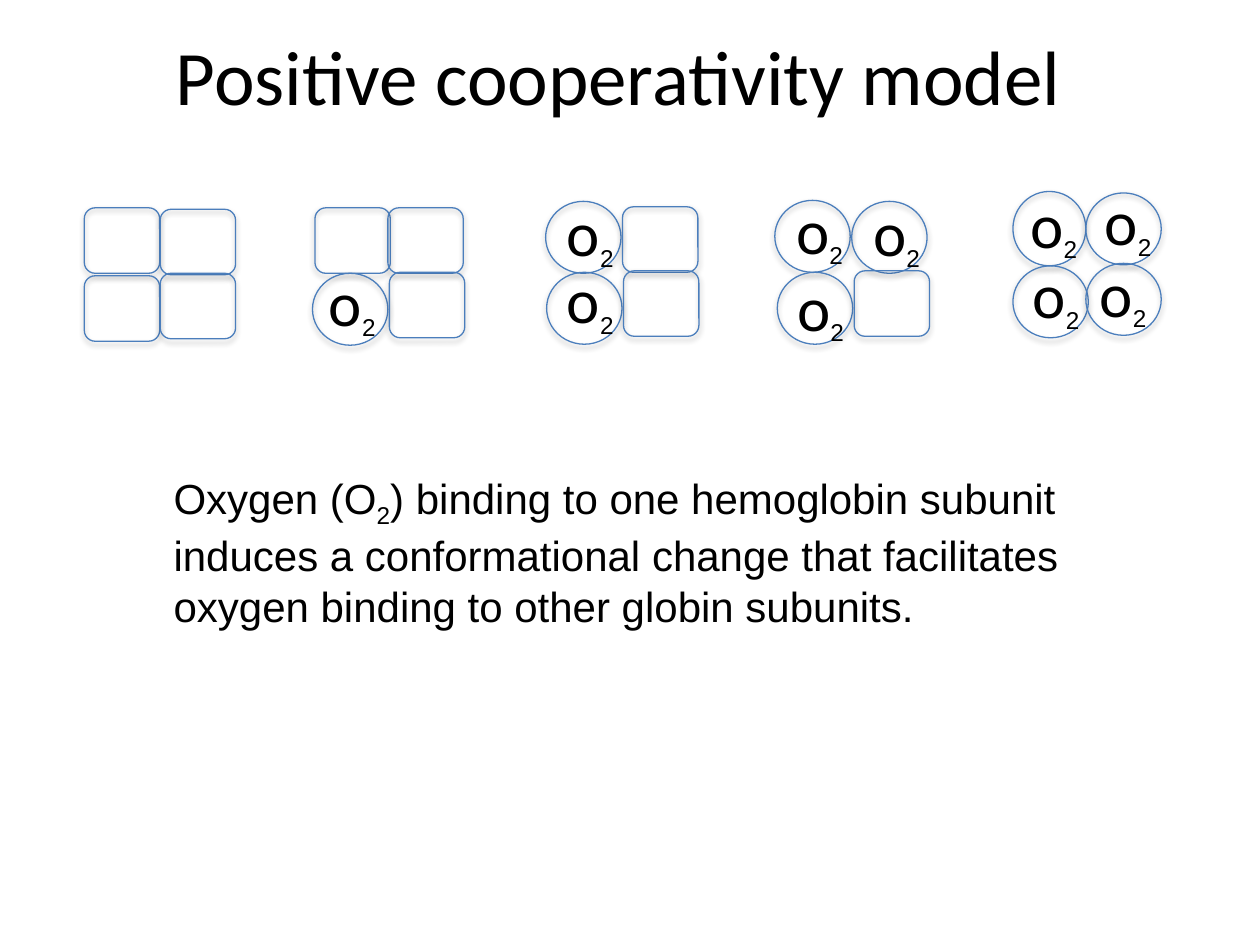
from lxml import etree
from pptx import Presentation
from pptx.dml.color import RGBColor
from pptx.enum import shapes, text
from pptx.oxml import ns
from pptx.util import Cm, Pt

BLACK = RGBColor(0x00, 0x00, 0x00)
BLUE = RGBColor(0x4B, 0x7E, 0xBC)

# Content: runs are (text, font, size, is subscript)
TITLE = [("Positive cooperativity model", "Calibri", 44, False)]
OXYGEN = [("o", "Calibri", 36, False), ("2", "Arial", 24, True)]
NOTE = [
    ("Oxygen (O", "Arial", 24, False),
    ("2", "Arial", 24, True),
    (") binding to one hemoglobin subunit induces a conformational change "
     "that facilitates oxygen binding to other globin subunits.",
     "Arial", 24, False),
]

# Subunit kinds: preset, width and height in cm
KINDS = {
    "free": (shapes.MSO_SHAPE.ROUNDED_RECTANGLE, 1.52, 1.32),
    "bound": (shapes.MSO_SHAPE.OVAL, 1.52, 1.45),
    "slim": (shapes.MSO_SHAPE.OVAL, 1.47, 1.5),
}

# Tetramers: kind, left, top, then the label's shift for bound subunits (cm)
STAGES = [
    [("free", 1.7, 4.19), ("free", 3.23, 4.22),
     ("free", 1.7, 5.56), ("free", 3.23, 5.51)],
    [("free", 6.35, 4.19), ("free", 7.82, 4.19),
     ("bound", 6.3, 5.51, 0.08, -0.33), ("free", 7.85, 5.49)],
    [("bound", 11.0, 4.06, 0.18, -0.28), ("free", 12.55, 4.17),
     ("bound", 11.02, 5.49, 0.16, -0.36), ("free", 12.57, 5.46)],
    [("bound", 15.62, 4.04, 0.18, -0.31), ("bound", 17.17, 4.06, 0.18, -0.28),
     ("bound", 15.67, 5.49, 0.15, -0.21), ("free", 17.22, 5.46)],
    [("slim", 20.42, 3.86, 0.1, -0.25), ("bound", 21.89, 3.89, 0.13, -0.33),
     ("bound", 20.42, 5.36, 0.15, -0.33), ("bound", 21.89, 5.31, 0.03, -0.31)],
]


def write(frame, runs):
    para = frame.paragraphs[0]
    for words, face, size, sub in runs:
        run = para.add_run()
        run.text = words
        run.font.name = face
        run.font.size = Pt(size)
        run.font.color.rgb = BLACK
        if sub:
            run.font._element.set("baseline", "-25000")


def add_text(slide, runs, box, wrap):
    frame = slide.shapes.add_textbox(*map(Cm, box)).text_frame
    frame.word_wrap = wrap
    frame.auto_size = text.MSO_AUTO_SIZE.SHAPE_TO_FIT_TEXT
    write(frame, runs)


def add_shade(shape):
    shape.shadow.inherit = False
    effects = shape._element.spPr.find(ns.qn("a:effectLst"))
    shade = etree.SubElement(
        effects, ns.qn("a:outerShdw"), blurRad=str(Pt(3.15)),
        dist=str(Pt(1.81)), dir="5400000", rotWithShape="0")
    tint = etree.SubElement(shade, ns.qn("a:srgbClr"), val=str(BLACK))
    etree.SubElement(tint, ns.qn("a:alpha"), val="35000")


def add_unit(slide, kind, left, top):
    preset, width, height = KINDS[kind]
    unit = slide.shapes.add_shape(
        preset, Cm(left), Cm(top), Cm(width), Cm(height))
    unit.fill.background()
    unit.line.color.rgb = BLUE
    unit.line.width = Pt(0.75)
    add_shade(unit)


def main():
    deck = Presentation()
    deck.slide_width, deck.slide_height = Cm(25.4), Cm(19.05)
    slide = deck.slides.add_slide(deck.slide_layouts[5])

    # Title
    title = slide.shapes.title
    title.left, title.top = Cm(1.04), Cm(-0.08)
    title.width, title.height = Cm(22.86), Cm(3.18)
    title.text_frame.vertical_anchor = text.MSO_ANCHOR.MIDDLE
    write(title.text_frame, TITLE)
    title.text_frame.paragraphs[0].alignment = text.PP_ALIGN.CENTER

    # Subunits, then oxygen labels on top
    units = [unit for stage in STAGES for unit in stage]
    for kind, left, top, *_ in units:
        add_unit(slide, kind, left, top)
    for _, left, top, *shift in units:
        if shift:
            add_text(slide, OXYGEN,
                     (left + shift[0], top + shift[1], 1.5, 1.8), False)

    # Explanation
    add_text(slide, NOTE, (3.25, 9.4, 19.05, 3.33), True)
    deck.save("out.pptx")


if __name__ == "__main__":
    main()
